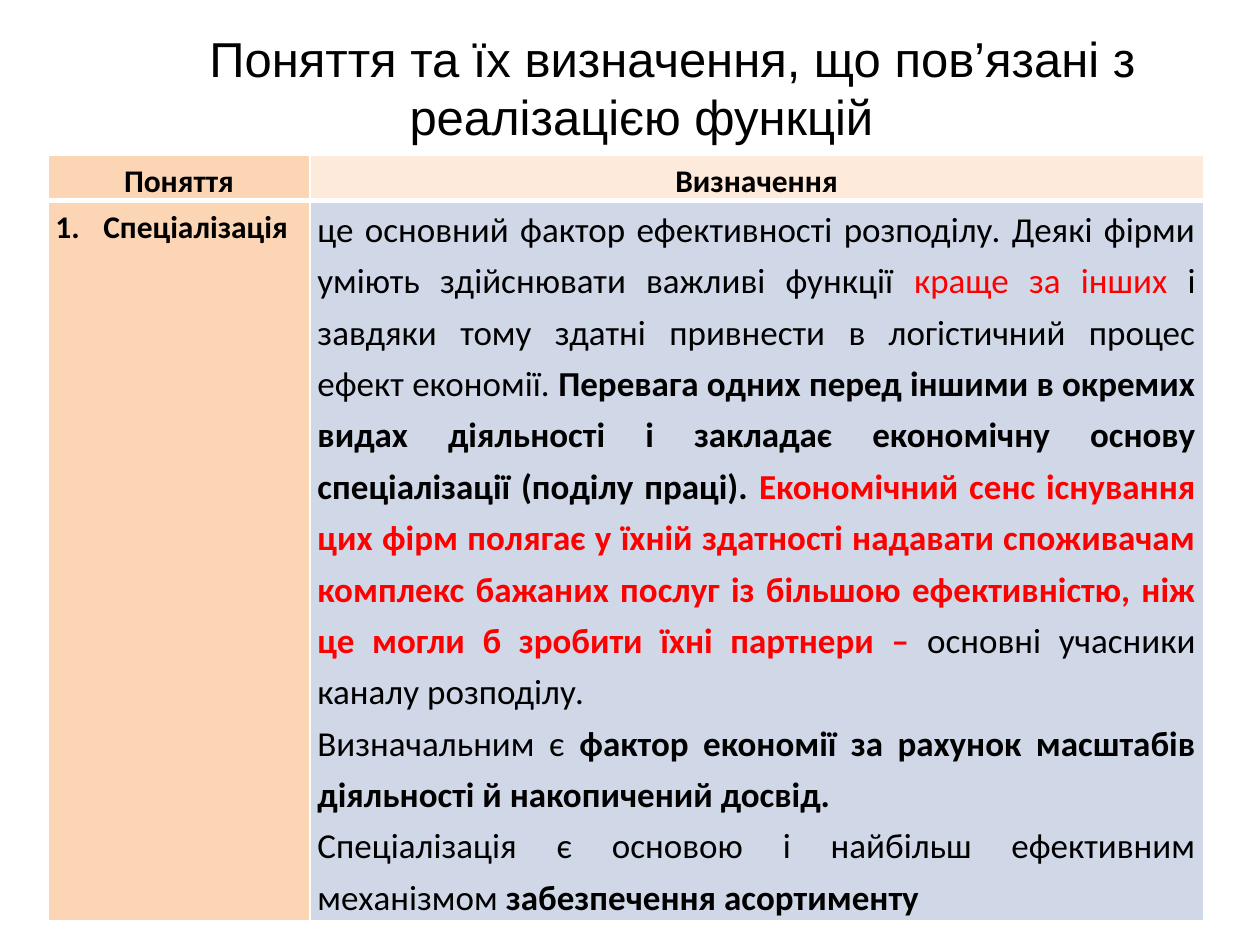
import pptx
import pptx.util
from lxml import etree
from pptx.dml.color import RGBColor
from pptx.enum.text import MSO_ANCHOR, MSO_AUTO_SIZE, PP_ALIGN
from pptx.oxml.ns import qn
from pptx.util import Inches, Pt

COLORS = {
    "text": "000000",
    "accent": "FF0000",
    "term": "FCD5B5",
    "header": "FDEADA",
    "definition": "D0D8E8",
    "border": "FFFFFF",
}

TITLE = "Поняття та їх визначення, що пов’язані з реалізацією функцій"

# Each run is (text, bold, colour name)
DEFINITION = [
    [
        ("це основний фактор ефективності розподілу. Деякі фірми уміють "
         "здійснювати важливі функції ", False, "text"),
        ("краще за інших ", False, "accent"),
        ("і завдяки тому здатні привнести в логістичний процес ефект "
         "економії. ", False, "text"),
        ("Перевага одних перед іншими в окремих видах діяльності і закладає "
         "економічну основу спеціалізації (поділу праці). ", True, "text"),
        ("Економічний сенс існування цих фірм полягає у їхній здатності "
         "надавати споживачам комплекс бажаних послуг із більшою "
         "ефективністю, ніж це могли б зробити їхні партнери – ",
         True, "accent"),
        ("основні учасники каналу розподілу.", False, "text"),
    ],
    [
        ("Визначальним є ", False, "text"),
        ("фактор економії за рахунок масштабів діяльності й накопичений "
         "досвід. ", True, "text"),
    ],
    [
        ("Спеціалізація є основою і найбільш ефективним механізмом ",
         False, "text"),
        ("забезпечення асортименту", True, "text"),
    ],
]


def rgb(name):
    return RGBColor.from_string(COLORS[name])


def add_title(s, left, top, width, height):
    sp = s.shapes.title
    sp.left, sp.top, sp.width, sp.height = left, top, width, height
    tf = sp.text_frame
    tf.text = TITLE
    tf.word_wrap = True
    tf.auto_size = MSO_AUTO_SIZE.SHAPE_TO_FIT_TEXT
    tf.vertical_anchor = MSO_ANCHOR.MIDDLE
    p = tf.paragraphs[0]
    p.alignment = PP_ALIGN.CENTER
    p.font.name, p.font.size = "Arial", Pt(28)
    p.font.color.rgb = rgb("text")
    p._p.get_or_add_pPr().set("indent", str(Inches(0.49)))


def set_borders(cell, top=1, bottom=1):
    """Draw the four cell borders, with widths in points."""
    tcPr = cell._tc.get_or_add_tcPr()
    widths = {"a:lnL": 1, "a:lnR": 1, "a:lnT": top, "a:lnB": bottom}
    for i, (tag, width) in enumerate(widths.items()):
        ln = etree.Element(qn(tag), w=str(Pt(width)))
        fill = etree.SubElement(ln, qn("a:solidFill"))
        etree.SubElement(fill, qn("a:srgbClr"), val=COLORS["border"])
        tcPr.insert(i, ln)


def fill_cell(cell, fill, paragraphs, size, align):
    cell.fill.solid()
    cell.fill.fore_color.rgb = rgb(fill)
    cell.margin_left = cell.margin_right = Inches(0.06)
    cell.margin_top = cell.margin_bottom = 0
    tf = cell.text_frame
    for i, runs in enumerate(paragraphs):
        p = tf.add_paragraph() if i else tf.paragraphs[0]
        p.alignment = align
        p.line_spacing = 1.2
        p.font.name, p.font.size = "Calibri", Pt(size)
        for text, bold, color in runs:
            r = p.add_run()
            r.text = text
            r.font.bold = bold
            r.font.color.rgb = rgb(color)


def number_paragraph(p, indent):
    pPr = p._p.get_or_add_pPr()
    pPr.set("marL", str(indent))
    pPr.set("indent", str(-indent))
    bullet = etree.Element(qn("a:buAutoNum"), type="arabicPeriod")
    pPr.find(qn("a:lnSpc")).addnext(bullet)


def add_concept_table(s, left, top, width, height):
    table = s.shapes.add_table(2, 2, left, top, width, height).table
    term_width, header_height = Inches(2.08), Inches(0.36)
    table.columns[0].width = term_width
    table.columns[1].width = width - term_width
    table.rows[0].height = header_height
    table.rows[1].height = height - header_height

    headings = (("Поняття", "term"), ("Визначення", "header"))
    for col, (heading, fill) in enumerate(headings):
        fill_cell(table.cell(0, col), fill, [[(heading, True, "text")]],
                  18, PP_ALIGN.CENTER)
        set_borders(table.cell(0, col), bottom=3)
        set_borders(table.cell(1, col), top=3)

    term = table.cell(1, 0)
    fill_cell(term, "term", [[("Спеціалізація", True, "text")]],
              18, PP_ALIGN.JUSTIFY)
    number_paragraph(term.text_frame.paragraphs[0], Inches(0.38))
    fill_cell(table.cell(1, 1), "definition", DEFINITION,
              20, PP_ALIGN.JUSTIFY)


def main():
    prs = pptx.Presentation()
    prs.slide_width, prs.slide_height = Inches(10), Inches(7.5)
    s = prs.slides.add_slide(prs.slide_layouts[5])
    add_concept_table(s, Inches(0.38), Inches(1.23), Inches(9.17), Inches(6.08))
    add_title(s, Inches(0.38), Inches(0.17), Inches(9.42), Inches(1.04))
    prs.save("out.pptx")


if __name__ == "__main__":
    main()
